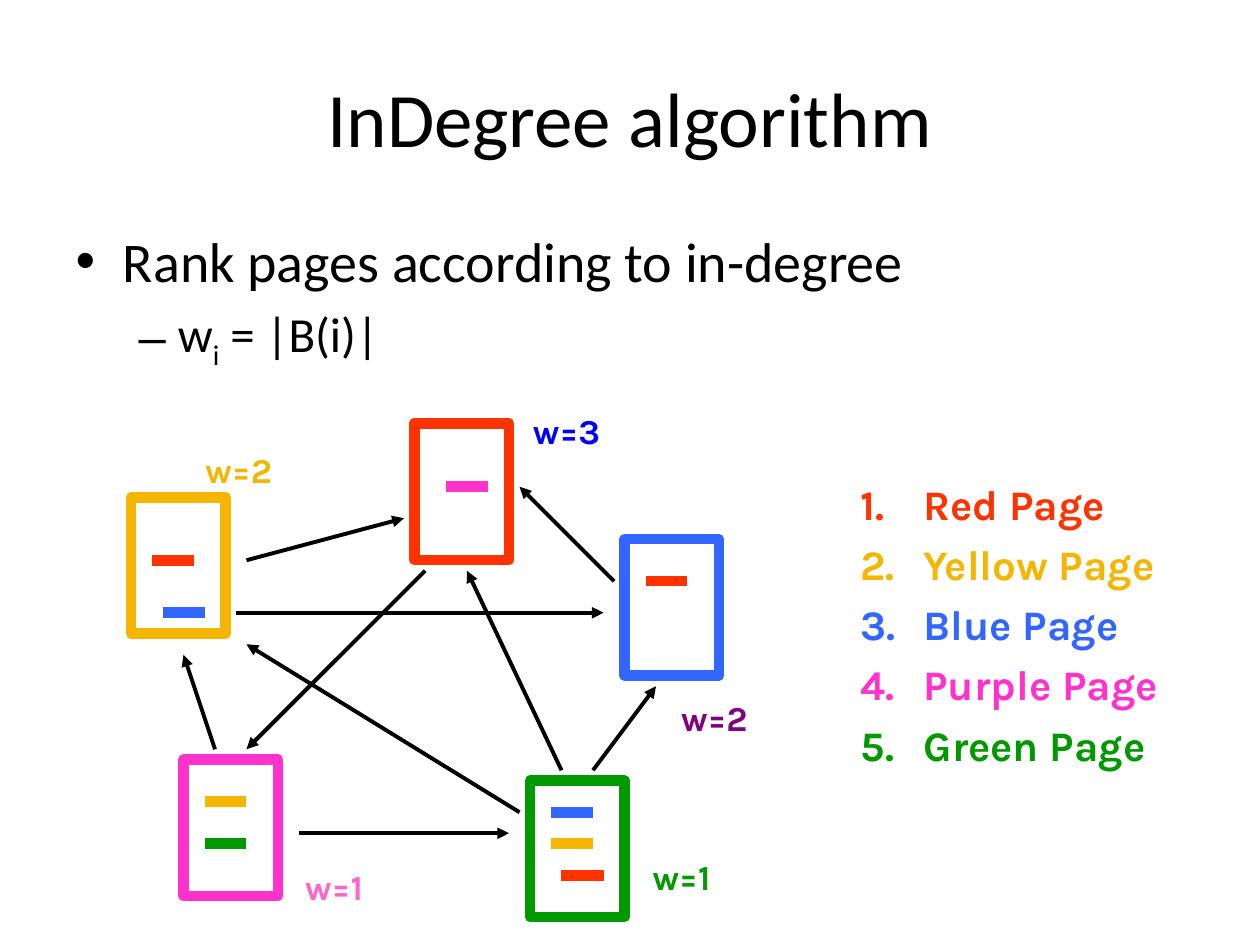
import pptx
import pptx.dml.color
import pptx.enum.shapes
import pptx.enum.text
import pptx.oxml.ns
import pptx.util
from lxml import etree

CELL = 1 / 12  # grid cell, inches
LEFT, TOP = 0.04, 0.03  # grid origin, inches
PAGE_COLS, PAGE_ROWS, LINK_COLS = 9, 13, 4

RED, YELLOW, BLUE = "FF3300", "F5B603", "3366FF"
PURPLE, GREEN = "FF33CC", "009900"

# column, row, colour, links inside as (column, row, colour) from the page corner
PAGES = [
    (12, 47, YELLOW, [(2, 6, RED), (3, 11, BLUE)]),
    (17, 72, PURPLE, [(2, 4, YELLOW), (2, 8, GREEN)]),
    (50, 74, GREEN, [(2, 3, BLUE), (2, 6, YELLOW), (3, 9, RED)]),
    (59, 51, BLUE, [(2, 4, RED)]),
    (39, 40, RED, [(3, 6, PURPLE)]),
]
ARROWS = [
    ((28, 79), (48, 79)),
    ((40, 54), (23, 71)),
    ((20, 71), (17, 62)),
    ((23, 53), (38, 49)),
    ((22, 58), (57, 58)),
    ((58, 55), (49, 46)),
    ((53, 73), (44, 54)),
    ((56, 73), (62, 65)),
    ((49, 77), (23, 61)),
]
WEIGHTS = [
    (27.4, 81.5, "w=1", "FF66CC"),
    (60.5, 80.5, "w=1", GREEN),
    (63.2, 65.4, "w=2", "800080"),
    (49.1, 38, "w=3", "0000FF"),
    (17.9, 41.8, "w=2", YELLOW),
]
RANKING = [
    ("Red Page", RED),
    ("Yellow Page", YELLOW),
    ("Blue Page", BLUE),
    ("Purple Page", PURPLE),
    ("Green Page", GREEN),
]


def rgb(hex_colour):
    return pptx.dml.color.RGBColor.from_string(hex_colour)


def span(cells):
    return pptx.util.Inches(cells * CELL)


def position(col, row):
    """Return the slide position of a grid point."""
    return (pptx.util.Inches(LEFT + col * CELL),
            pptx.util.Inches(TOP + row * CELL))


def add_child(parent, tag, **attributes):
    child = etree.SubElement(parent, pptx.oxml.ns.qn(tag))
    for key, value in attributes.items():
        child.set(key, value)


def set_line(line, colour, width):
    line.color.rgb = rgb(colour)
    line.width = pptx.util.Pt(width)


def add_line(slide, start, end, colour, width, arrow=False):
    connector = slide.shapes.add_connector(
        pptx.enum.shapes.MSO_CONNECTOR.STRAIGHT,
        *position(*start), *position(*end))
    set_line(connector.line, colour, width)
    if arrow:
        add_child(connector.line._get_or_add_ln(), "a:tailEnd", type="triangle")
    add_child(connector._element.spPr, "a:effectLst")


def add_page(slide, col, row, colour, links):
    page = slide.shapes.add_shape(
        pptx.enum.shapes.MSO_SHAPE.RECTANGLE,
        *position(col, row), span(PAGE_COLS), span(PAGE_ROWS))
    page.shadow.inherit = False
    page.fill.solid()
    page.fill.fore_color.rgb = rgb("FFFFFF")
    set_line(page.line, colour, 6)
    for link_col, link_row, link_colour in links:
        x, y = col + link_col, row + link_row
        add_line(slide, (x, y), (x + LINK_COLS, y), link_colour, 6)


def add_text_frame(slide, col, row, cols, rows):
    box = slide.shapes.add_textbox(*position(col, row), span(cols), span(rows))
    frame = box.text_frame
    frame.word_wrap = False
    frame.auto_size = pptx.enum.text.MSO_AUTO_SIZE.SHAPE_TO_FIT_TEXT
    return frame


def write(paragraph, text, size, colour):
    paragraph.text = text
    font = paragraph.font
    font.name = "Karla"
    font.size = pptx.util.Pt(size)
    font.bold = True
    font.color.rgb = rgb(colour)


def add_weight(slide, col, row, text, colour):
    frame = add_text_frame(slide, col, row, 10.2, 5.2)
    write(frame.paragraphs[0], text, 20, colour)


def add_ranking(slide):
    frame = add_text_frame(slide, 80.3, 44.6, 33, 29)
    for index, (text, colour) in enumerate(RANKING):
        entry = frame.add_paragraph() if index else frame.paragraphs[0]
        entry.space_before = pptx.util.Pt(5.6)
        properties = entry._p.get_or_add_pPr()
        indent = pptx.util.Inches(0.5)
        properties.set("marL", str(indent))
        properties.set("indent", str(-indent))
        add_child(properties, "a:buFont", typeface="+mj-lt")
        add_child(properties, "a:buAutoNum", type="arabicPeriod")
        write(entry, text, 24, colour)


def place(shape, left, top, width, height):
    shape.left, shape.top = pptx.util.Inches(left), pptx.util.Inches(top)
    shape.width, shape.height = pptx.util.Inches(width), pptx.util.Inches(height)


def fill_placeholders(slide):
    title, body = slide.placeholders
    place(title, 0.5, 0.3, 9, 1.25)
    title.text_frame.text = "InDegree algorithm"

    place(body, 0.5, 1.75, 9, 4.95)
    body.text_frame.text = "Rank pages according to in-degree"
    formula = body.text_frame.add_paragraph()
    formula.level = 1
    for text in ("w", "i", " = |B(i)|"):
        run = formula.add_run()
        run.text = text
        if text == "i":
            run.font._element.set("baseline", "-25000")


def main():
    presentation = pptx.Presentation()
    presentation.slide_width = pptx.util.Inches(10)
    presentation.slide_height = pptx.util.Inches(7.5)
    slide = presentation.slides.add_slide(presentation.slide_layouts[1])
    fill_placeholders(slide)
    add_ranking(slide)
    for page in PAGES:
        add_page(slide, *page)
    for start, end in ARROWS:
        add_line(slide, start, end, "000000", 2.25, arrow=True)
    for weight in WEIGHTS:
        add_weight(slide, *weight)
    presentation.save("out.pptx")


if __name__ == "__main__":
    main()
